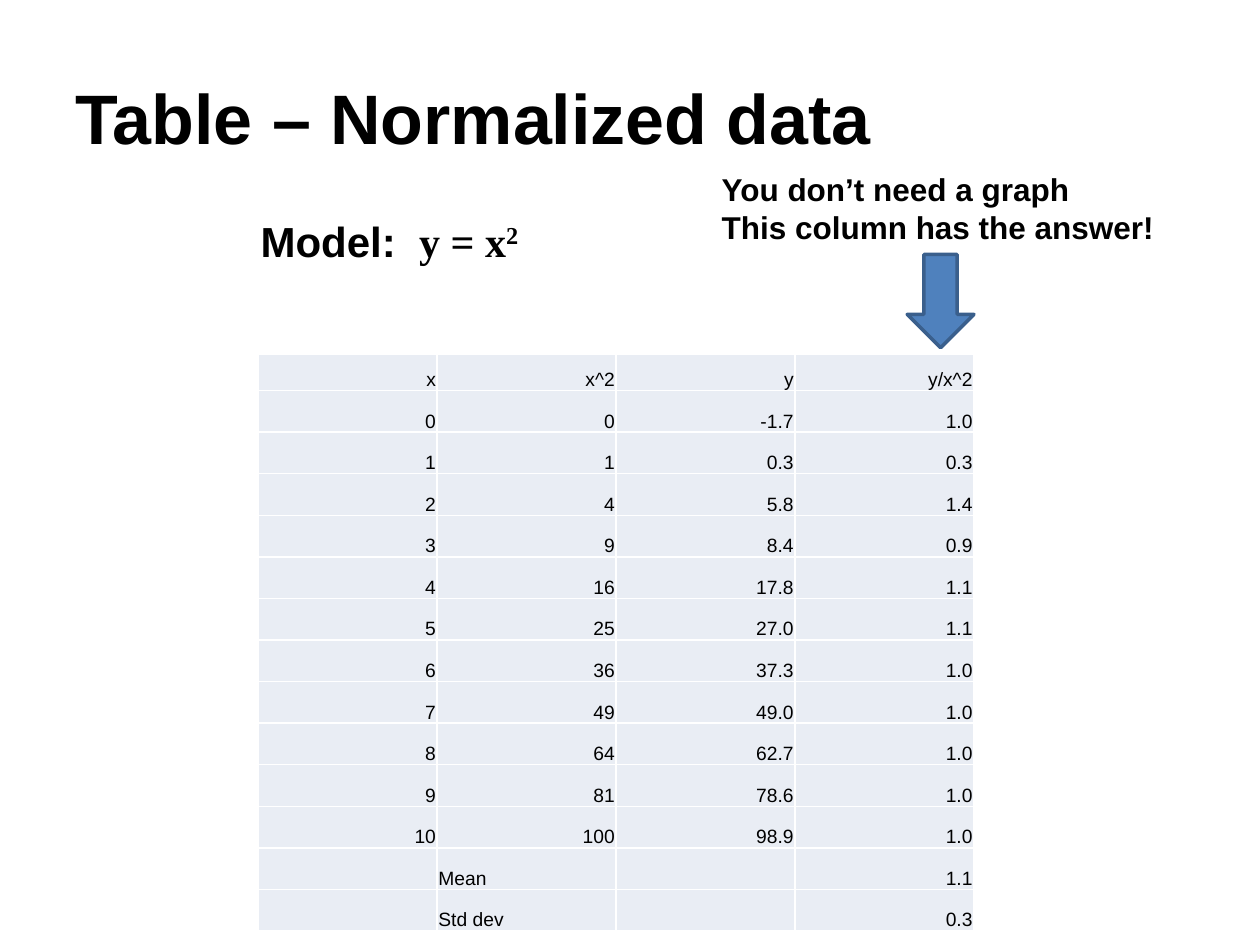
"""Build the slide with the table of normalized data for the model y = x²."""
from pptx import Presentation, util as u
from pptx.dml.color import RGBColor
from pptx.enum import shapes, text

COLORS = {"ink": "000000", "cell": "E9EDF4", "arrow": "4F81BD", "outline": "3A5F8C"}
SANS, SERIF = "Arial", "Times New Roman"

TITLE = "Table – Normalized data"
MODEL = [("Model:  ", SANS), ("y = x", SERIF), ("2", SERIF)]
NOTE = ["You don’t need a graph", "This column has the answer!"]
HEADER = ("x", "x^2", "y", "y/x^2")
Y_VALUES = ["-1.7", "0.3", "5.8", "8.4", "17.8", "27.0", "37.3", "49.0", "62.7", "78.6", "98.9"]
RATIOS = ["1.0", "0.3", "1.4", "0.9", "1.1", "1.1", "1.0", "1.0", "1.0", "1.0", "1.0"]
SUMMARY = [("", "Mean", "", "1.1"), ("", "Std dev", "", "0.3")]
LABELS = {row[1] for row in SUMMARY}

COL_W, HEADER_H, ROW_H = 1.42, 0.29, 0.33


def color(name):
    return RGBColor.from_string(COLORS[name])


def style(r, size, font=SANS, bold=True):
    r.font.size = u.Pt(size)
    r.font.name = font
    r.font.bold = bold
    r.font.color.rgb = color("ink")


def add_text(s, box, paragraphs, size, wrap=False, anchor=text.MSO_ANCHOR.TOP):
    tf = s.shapes.add_textbox(*map(u.Inches, box)).text_frame
    tf.word_wrap = wrap
    tf.vertical_anchor = anchor
    for i, runs in enumerate(paragraphs):
        p = tf.add_paragraph() if i else tf.paragraphs[0]
        for words, font in runs:
            r = p.add_run()
            r.text = words
            style(r, size, font)
    return tf


def fill_cell(cell, words):
    cell.fill.solid()
    cell.fill.fore_color.rgb = color("cell")
    cell.vertical_anchor = text.MSO_ANCHOR.BOTTOM
    cell.margin_left = cell.margin_right = cell.margin_top = u.Inches(0.01)
    cell.margin_bottom = 0
    if words:
        p = cell.text_frame.paragraphs[0]
        p.text = words
        p.alignment = text.PP_ALIGN.LEFT if words in LABELS else text.PP_ALIGN.RIGHT
        style(p.runs[0], 11, bold=False)


def add_data_table(s, left, top):
    data = [(str(x), str(x * x), y, ratio) for x, (y, ratio) in enumerate(zip(Y_VALUES, RATIOS))]
    rows = [HEADER, *data, *SUMMARY]
    height = HEADER_H + ROW_H * (len(rows) - 1)
    size = map(u.Inches, (left, top, COL_W * len(HEADER), height))
    table = s.shapes.add_table(len(rows), len(HEADER), *size).table
    table.first_row = table.horz_banding = False
    for col in table.columns:
        col.width = u.Inches(COL_W)
    for i, row in enumerate(rows):
        table.rows[i].height = u.Inches(ROW_H if i else HEADER_H)
        for j, words in enumerate(row):
            fill_cell(table.cell(i, j), words)


def add_arrow(s, box):
    sp = s.shapes.add_shape(shapes.MSO_SHAPE.DOWN_ARROW, *map(u.Inches, box))
    sp.shadow.inherit = False
    sp.fill.solid()
    sp.fill.fore_color.rgb = color("arrow")
    sp.line.color.rgb = color("outline")
    sp.line.width = u.Pt(2)


def main():
    prs = Presentation()
    prs.slide_width, prs.slide_height = u.Inches(10), u.Inches(7.5)
    s = prs.slides.add_slide(prs.slide_layouts[6])
    add_text(s, (0.5, 0.3, 9, 1.25), [[(TITLE, SANS)]], 40, True, text.MSO_ANCHOR.MIDDLE)
    add_data_table(s, 2.05, 2.81)
    model = add_text(s, (1.97, 1.66, 2.36, 0.5), [MODEL], 24)
    exponent = model.paragraphs[0].runs[-1]
    exponent.font._element.set("baseline", "30000")
    add_text(s, (5.63, 1.3, 3.67, 0.71), [[(line, SANS)] for line in NOTE], 18)
    add_arrow(s, (7.2, 2.02, 0.53, 0.74))
    prs.save("out.pptx")


if __name__ == "__main__":
    main()
